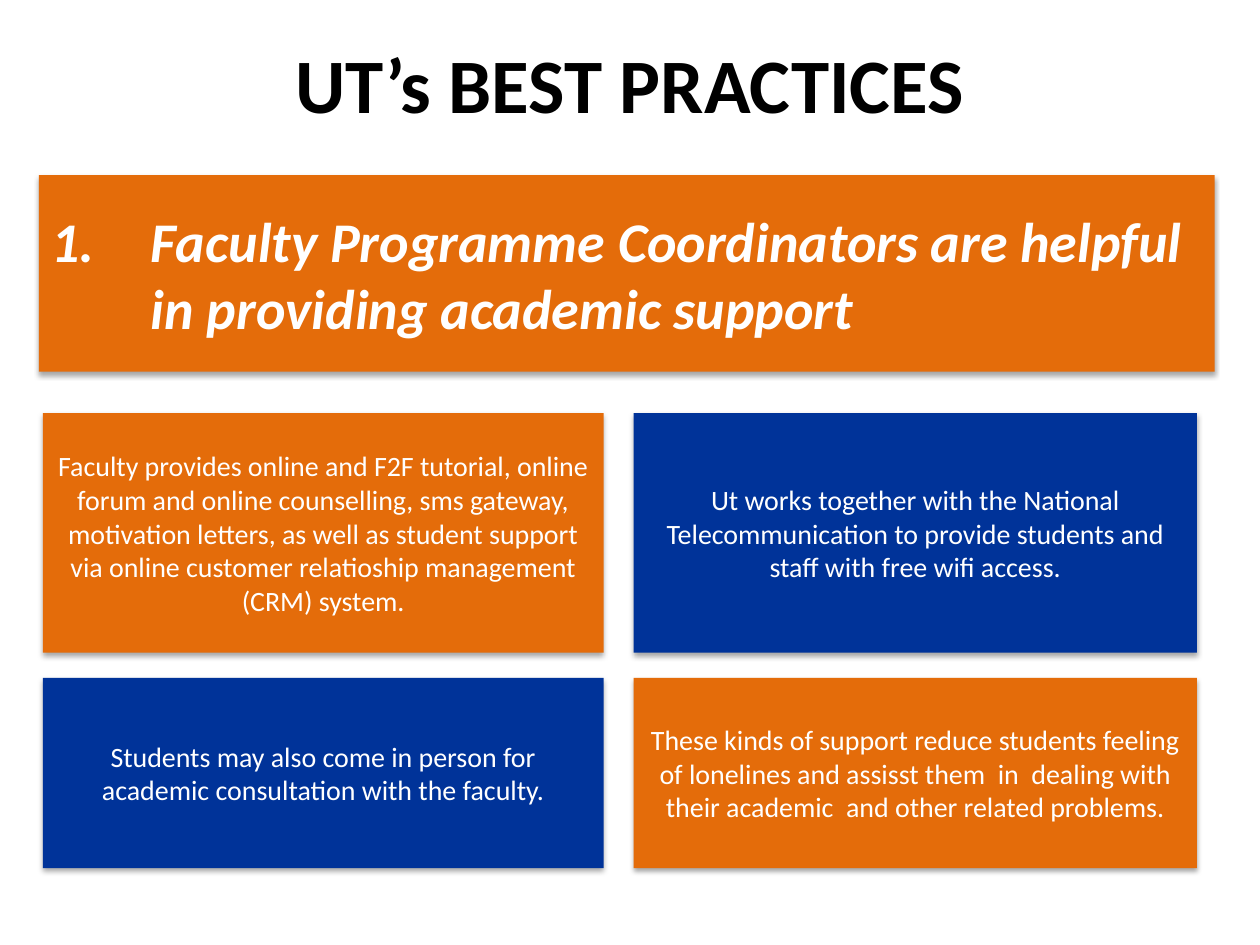
from dataclasses import dataclass

from lxml import etree
from pptx import Presentation
from pptx.dml.color import RGBColor
from pptx.enum.shapes import MSO_SHAPE
from pptx.enum.text import MSO_ANCHOR, PP_ALIGN
from pptx.oxml.ns import qn
from pptx.util import Inches, Pt

RECT = MSO_SHAPE.RECTANGLE
MIDDLE = MSO_ANCHOR.MIDDLE
LEFT, CENTER = PP_ALIGN.LEFT, PP_ALIGN.CENTER


@dataclass(frozen=True)
class Theme:
    font: str = "Calibri"
    black: str = "000000"
    white: str = "FFFFFF"
    orange: str = "E46C0A"
    blue: str = "003399"
    title: int = 44
    banner: int = 32
    body: int = 16


T = Theme()

TITLE = "UT’s BEST PRACTICES"
BANNER = "1. \tFaculty Programme Coordinators are helpful in providing academic support"
CARDS = [
    [
        "Faculty provides online and F2F tutorial, online forum and online counselling, "
        "sms gateway, motivation letters, as well as student support via online customer "
        "relatioship management (CRM) system.",
        "Ut works together with the National Telecommunication to provide students and "
        "staff with free wifi access.",
    ],
    [
        "Students may also come in person for academic consultation with the faculty.",
        "These kinds of support reduce students feeling of lonelines and assisst them  in  "
        "dealing with their academic  and other related problems.",
    ],
]

TITLE_BOX = (0.5, 0.22, 9, 0.88)
BANNER_BOX = (0.31, 1.39, 9.33, 1.56)
GRID_LEFT, GRID_TOP = 0.34, 3.28
COL_WIDTHS, COL_GAP = (4.45, 4.47), 0.24
ROW_HEIGHTS, ROW_GAP = (1.9, 1.51), 0.2
HANGING = 0.79


def write(shape, text, size, color=T.white, bold=False, italic=False,
          align=CENTER, hanging=0):
    tf = shape.text_frame
    tf.word_wrap = True
    tf.vertical_anchor = MIDDLE
    p = tf.paragraphs[0]
    p.alignment = align
    if hanging:
        pPr = p._p.get_or_add_pPr()
        pPr.set("marL", str(Inches(hanging)))
        pPr.set("indent", str(-Inches(hanging)))
    r = p.add_run()
    r.text = text
    r.font.name = T.font
    r.font.size = Pt(size)
    r.font.bold = bold
    r.font.italic = italic
    r.font.color.rgb = RGBColor.from_string(color)


def add_shadow(shape):
    shape.shadow.inherit = False
    effects = shape._element.spPr.find(qn("a:effectLst"))
    outer = etree.SubElement(effects, qn("a:outerShdw"), blurRad=str(Pt(3.1)),
                             dist=str(Pt(1.8)), dir="5400000", rotWithShape="0")
    black = etree.SubElement(outer, qn("a:srgbClr"), val=T.black)
    etree.SubElement(black, qn("a:alpha"), val="35000")


def add_box(s, box, fill):
    sp = s.shapes.add_shape(RECT, *map(Inches, box))
    sp.fill.solid()
    sp.fill.fore_color.rgb = RGBColor.from_string(fill)
    sp.line.fill.background()
    add_shadow(sp)
    return sp


def starts(first, sizes, gap):
    return [first + sum(sizes[:i]) + i * gap for i in range(len(sizes))]


def main():
    prs = Presentation()
    prs.slide_width, prs.slide_height = Inches(10), Inches(7.5)
    s = prs.slides.add_slide(prs.slide_layouts[5])

    title = s.shapes.title
    title.left, title.top, title.width, title.height = map(Inches, TITLE_BOX)
    write(title, TITLE, T.title, color=T.black, bold=True)

    banner = add_box(s, BANNER_BOX, T.orange)
    write(banner, BANNER, T.banner, bold=True, italic=True, align=LEFT, hanging=HANGING)

    lefts = starts(GRID_LEFT, COL_WIDTHS, COL_GAP)
    tops = starts(GRID_TOP, ROW_HEIGHTS, ROW_GAP)
    for row, texts in enumerate(CARDS):
        for col, text in enumerate(texts):
            box = (lefts[col], tops[row], COL_WIDTHS[col], ROW_HEIGHTS[row])
            fill = T.blue if (row + col) % 2 else T.orange
            write(add_box(s, box, fill), text, T.body)

    prs.save("out.pptx")


if __name__ == "__main__":
    main()
